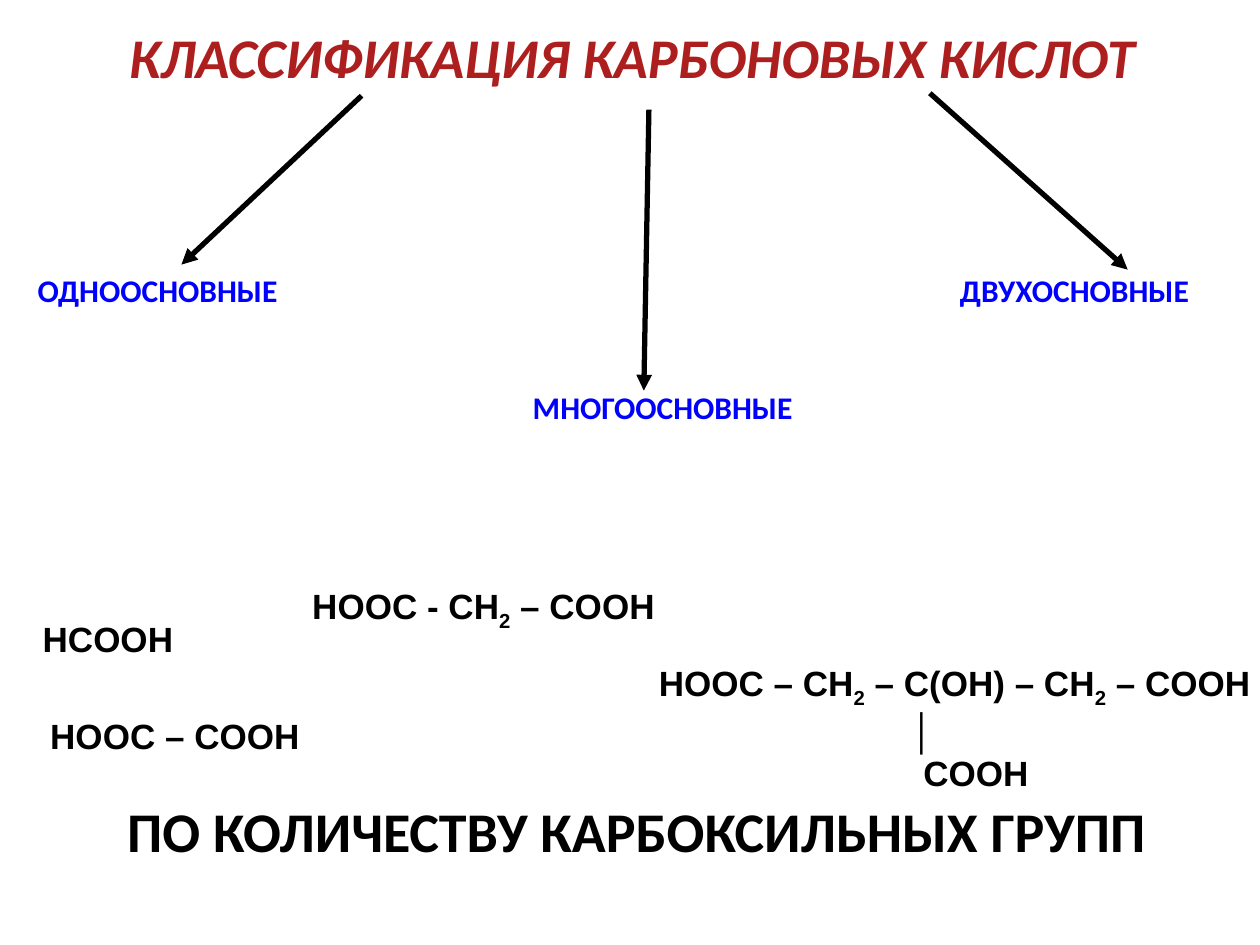
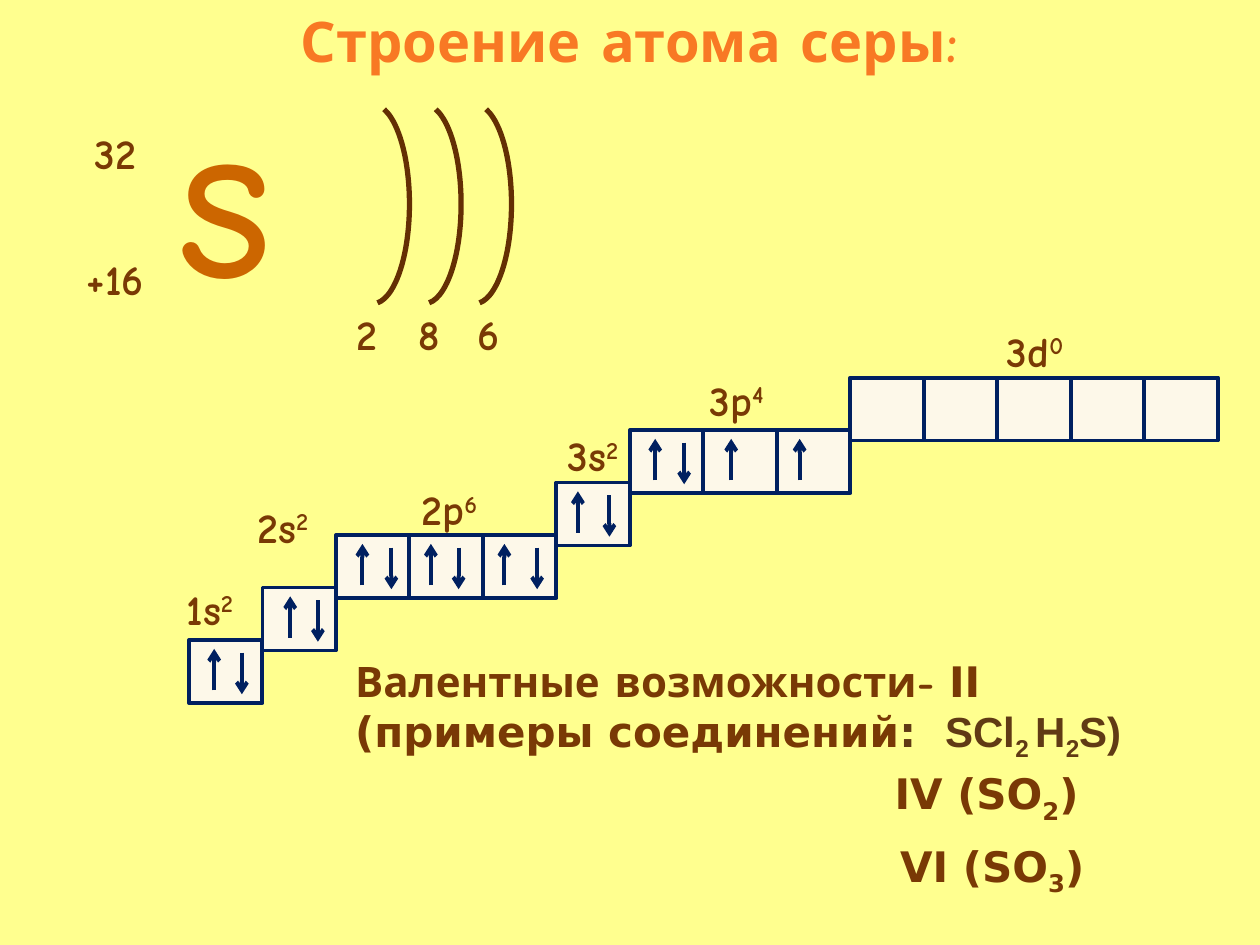
from lxml import etree
from pptx import Presentation
from pptx.dml.color import RGBColor
from pptx.enum.shapes import MSO_CONNECTOR, MSO_SHAPE
from pptx.enum.text import MSO_ANCHOR, PP_ALIGN
from pptx.oxml.ns import qn
from pptx.util import Inches, Pt

LEFT, CENTER = PP_ALIGN.LEFT, PP_ALIGN.CENTER
TOP, MIDDLE = MSO_ANCHOR.TOP, MSO_ANCHOR.MIDDLE
STRAIGHT = MSO_CONNECTOR.STRAIGHT
RECTANGLE, ARC = MSO_SHAPE.RECTANGLE, MSO_SHAPE.ARC

COLORS = {
    "black": "000000", "red": "AD1F1F", "blue": "0000FF",
    "pale yellow": "FFFF8F", "orange": "F87924", "symbol": "CC6600",
    "brown": "793905", "dark brown": "603A14", "shell": "642F04",
    "navy": "002060", "cell": "FDF8E9",
}
SUB, SUPER = -25, 30
TITLE_SIZE = 32


def add_text(slide, box, paragraphs, size, font, color, align=LEFT, anchor=TOP,
             italic=False, indents=()):
    """Add bold text; a run is (text, baseline %, font, color), the last three optional."""
    shape = slide.shapes.add_textbox(*[Inches(value) for value in box])
    frame = shape.text_frame
    frame.word_wrap = True
    frame.vertical_anchor = anchor
    for index, runs in enumerate(paragraphs):
        paragraph = frame.add_paragraph() if index else frame.paragraphs[0]
        paragraph.alignment = align
        if indents:
            properties = paragraph._p.get_or_add_pPr()
            properties.set("marL", str(Inches(indents[index])))
            properties.set("indent", "0")
        for text, *style in runs:
            baseline, run_font, run_color = style + [0, font, color][len(style):]
            run = paragraph.add_run()
            run.text = text
            run.font.size = Pt(size)
            run.font.name = run_font
            run.font.bold = True
            run.font.italic = italic
            run.font.color.rgb = RGBColor.from_string(COLORS[run_color])
            if baseline:
                run._r.get_or_add_rPr().set("baseline", str(baseline * 1000))


def add_arrow(slide, start, end, color, width, head):
    ends = [Inches(value) for value in (*start, *end)]
    connector = slide.shapes.add_connector(STRAIGHT, *ends)
    connector.line.color.rgb = RGBColor.from_string(COLORS[color])
    connector.line.width = Pt(width)
    line = connector.line._get_or_add_ln()
    etree.SubElement(line, qn("a:tailEnd"), type=head)
    etree.SubElement(connector._element.spPr, qn("a:effectLst"))


presentation = Presentation()
presentation.slide_width = Inches(10)
presentation.slide_height = Inches(7.5)
blank = presentation.slide_layouts[6]

# Slide 1: classes of carboxylic acids
slide = presentation.slides.add_slide(blank)
add_text(slide, (0.82, 0.13, 8.4, 0.64), [[("КЛАССИФИКАЦИЯ КАРБОНОВЫХ КИСЛОТ",)]],
         TITLE_SIZE, "Calibri", "red", CENTER, italic=True)
add_text(slide, (0.84, 6.27, 8.43, 0.64), [[("ПО КОЛИЧЕСТВУ КАРБОКСИЛЬНЫХ ГРУПП",)]],
         TITLE_SIZE, "Calibri", "black", CENTER)

acid_classes = [
    ("ОДНООСНОВНЫЕ", (0.2, 2.1, 3.25, 0.4), (2.87, 0.76), (1.44, 2.1)),
    ("ДВУХОСНОВНЫЕ", (7.52, 2.1, 2.48, 0.4), (7.38, 0.74), (8.95, 2.14)),
    ("МНОГООСНОВНЫЕ", (4.13, 3.03, 2.56, 0.4), (5.15, 0.87), (5.11, 3.1)),
]
for name, box, start, end in acid_classes:
    add_text(slide, box, [[(name,)]], 18, "Calibri", "blue")
    add_arrow(slide, start, end, "black", 3, "triangle")

formulas = [
    ((0.24, 4.85, 1.25, 0.44), [("HCOOH",)]),
    ((2.38, 4.59, 4.07, 0.44), [("HOOC - СН",), ("2", SUB), (" – COOH",)]),
    ((0.3, 5.62, 2.92, 0.44), [("HOOC – COOH",)]),
]
for box, runs in formulas:
    add_text(slide, box, [runs], 20, "Arial", "black")

citric_acid = [
    [("HOOC – CH",), ("2", SUB), (" – C(ОH) – CH",), ("2", SUB), (" – COOH",)],
    [("│",)],
    [("COOH",)],
]
add_text(slide, (5.13, 5.2, 5.89, 1.11), citric_acid, 20, "Arial", "black",
         indents=(0, 2.01, 2.1))

# Slide 2: the sulfur atom
slide = presentation.slides.add_slide(blank)
slide.background.fill.solid()
slide.background.fill.fore_color.rgb = RGBColor.from_string(COLORS["pale yellow"])
add_text(slide, (0.31, 0, 9.37, 0.64), [[("Строение атома серы:",)]],
         TITLE_SIZE, "Comic Neue", "orange", CENTER)
add_text(slide, (1, 0.83, 1.58, 1.72), [[("S",)]], 96, "Comic Neue", "symbol", CENTER)
for number, top in (("32", 0.92), ("+16", 1.92)):
    add_text(slide, (0.5, top, 0.83, 0.58), [[(number,)]],
             24, "Comic Neue", "brown", CENTER, MIDDLE)

for electrons, arc_left, label_left in (("2", 2.67, 2.58), ("8", 3.08, 3.07), ("6", 3.48, 3.54)):
    shell = slide.shapes.add_shape(ARC, Inches(arc_left), Inches(0.83),
                                   Inches(0.58), Inches(1.58))
    shell.adjustments[0] = 166.03
    shell.adjustments[1] = 52.41
    shell.shadow.inherit = False
    shell.fill.background()
    shell.line.color.rgb = RGBColor.from_string(COLORS["shell"])
    shell.line.width = Pt(3)
    add_text(slide, (label_left, 2.4, 0.67, 0.5), [[(electrons,)]],
             24, "Comic Neue", "brown", CENTER, MIDDLE)

# Each subshell: name, electron count, label corner, and per cell
# the offsets of its up and down arrows
subshells = [
    ("1s", "2", (1.29, 4.54), [(0.2, 0.42)]),
    ("2s", "2", (1.87, 3.89), [(0.22, 0.44)]),
    ("2p", "6", (3.19, 3.75), [(0.21, 0.44), (0.17, 0.39), (0.17, 0.43)]),
    ("3s", "2", (4.33, 3.32), [(0.17, 0.42)]),
    ("3p", "4", (5.47, 2.88), [(0.2, 0.43), (0.22,), (0.18,)]),
    ("3d", "0", (7.84, 2.49), [()] * 5),
]
CELL_WIDTH, CELL_HEIGHT, LEVEL_STEP = 7 / 12, 0.5, 5 / 12
left, top = 1.5, 5.08
for name, count, corner, cells in subshells:
    for arrow_offsets in cells:
        cell = slide.shapes.add_shape(RECTANGLE, Inches(left), Inches(top),
                                      Inches(CELL_WIDTH), Inches(CELL_HEIGHT))
        cell.shadow.inherit = False
        cell.fill.solid()
        cell.fill.fore_color.rgb = RGBColor.from_string(COLORS["cell"])
        cell.line.color.rgb = RGBColor.from_string(COLORS["navy"])
        cell.line.width = Pt(2.25)
        for offset, (tail, tip) in zip(arrow_offsets, ((0.4, 0.07), (0.1, 0.43))):
            x = left + offset
            add_arrow(slide, (x, top + tail), (x, top + tip), "navy", 2.25, "arrow")
        left += CELL_WIDTH
    top -= LEVEL_STEP
    add_text(slide, (*corner, 0.75, 0.58), [[(name,), (count, SUPER)]],
             24, "Comic Neue", "brown", CENTER, MIDDLE)

valence = [
    ("Валентные возможности- ",),
    ("II (примеры соединений", 0, "DejaVu Sans"),
    (":  ", 0, "DejaVu Sans", "dark brown"),
]
for text, baseline in (("SCl", 0), ("2 ", SUB), ("H", 0), ("2", SUB), ("S)", 0)):
    valence.append((text, baseline, "Arial", "dark brown"))
add_text(slide, (2.72, 5.15, 7.09, 1.1), [valence], 24, "Comic Neue", "brown")

oxides = [
    ("IV (SO", "2", (5.94, 6.03, 3.78, 0.58)),
    ("VI (SO", "3", (6.89, 6.59, 1.97, 0.61)),
]
for prefix, index, box in oxides:
    add_text(slide, box, [[(prefix,), (index, SUB), (")",)]],
             24, "DejaVu Sans", "brown", CENTER, MIDDLE)

presentation.save("out.pptx")
